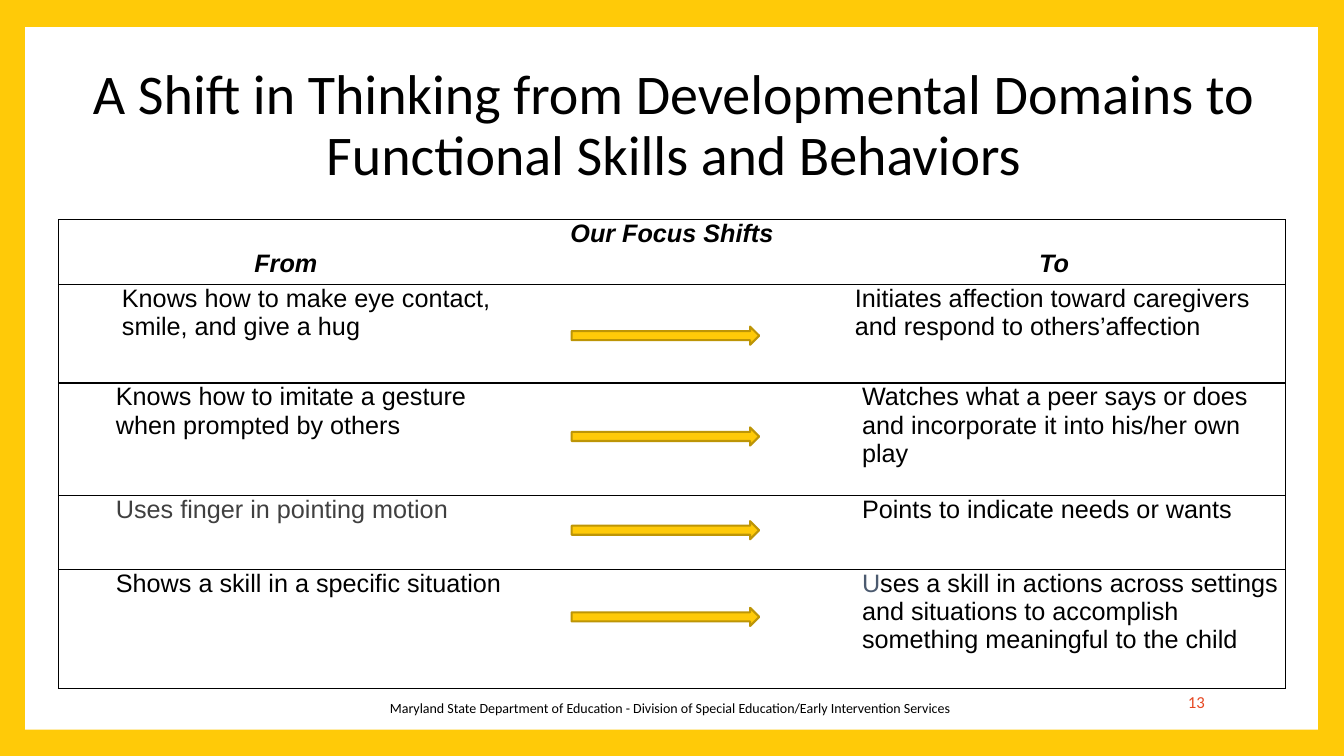
from dataclasses import dataclass
from lxml import etree
from pptx import Presentation
from pptx.dml.color import RGBColor
from pptx.enum.shapes import MSO_SHAPE
from pptx.enum.text import MSO_ANCHOR, PP_ALIGN
from pptx.oxml.ns import qn
from pptx.util import Inches, Pt

RECT, ARROW = MSO_SHAPE.RECTANGLE, MSO_SHAPE.RIGHT_ARROW
MIDDLE, TOP = MSO_ANCHOR.MIDDLE, MSO_ANCHOR.TOP
LEFT, CENTER, RIGHT = PP_ALIGN.LEFT, PP_ALIGN.CENTER, PP_ALIGN.RIGHT


@dataclass(frozen=True)
class Theme:
    gold: str = "FFCA08"
    gold_line: str = "BD9506"
    white: str = "FFFFFF"
    black: str = "000000"
    gray: str = "404040"
    slate: str = "4B5A6F"
    red: str = "E64823"
    heading: str = "Calibri"
    body: str = "Arial"
    title_size: int = 40
    table_size: int = 18
    number_size: int = 12
    footer_size: int = 10


T = Theme()


def write(tf, runs, font, size, align, bold=False):
    p = tf.paragraphs[0]
    p.alignment = align
    for text, color in runs:
        r = p.add_run()
        r.text = text
        r.font.name, r.font.size = font, Pt(size)
        r.font.bold = r.font.italic = bold
        r.font.color.rgb = RGBColor.from_string(color)
    return p


def set_borders(cell, sides):
    tcPr = cell._tc.get_or_add_tcPr()
    for i, side in enumerate("LRTB"):
        ln = etree.Element(qn(f"a:ln{side}"), w=str(Pt(1)))
        if side in sides:
            fill = etree.SubElement(ln, qn("a:solidFill"))
            etree.SubElement(fill, qn("a:srgbClr"), val=T.black)
        else:
            etree.SubElement(ln, qn("a:noFill"))
        tcPr.insert(i, ln)


prs = Presentation()
prs.slide_width, prs.slide_height = Inches(13.33), Inches(7.5)
s = prs.slides.add_slide(prs.slide_layouts[5])
s.background.fill.solid()
s.background.fill.fore_color.rgb = RGBColor.from_string(T.gold)

title = s.shapes.title
title.left, title.top = Inches(0.62), Inches(0.67)
title.width, title.height = Inches(12.12), Inches(1.18)
title.text_frame.word_wrap = True
title.text_frame.vertical_anchor = MIDDLE
p = write(title.text_frame,
          [("A Shift in Thinking from Developmental Domains to Functional Skills and Behaviors", T.black)],
          T.heading, T.title_size, CENTER)
p.line_spacing = 0.9

frame = s.shapes.add_shape(RECT, Inches(0.25), Inches(0.27), Inches(12.82), Inches(6.97))
frame.shadow.inherit = False
frame.fill.solid()
frame.fill.fore_color.rgb = RGBColor.from_string(T.white)
frame.line.fill.background()
title.element.addprevious(frame.element)

col_widths = [4.58, 3, 4.59]
row_heights = [0.3, 0.34, 0.98, 1.12, 0.73, 1.18]
shifts = [
    ([("Knows how to make eye contact, smile, and give a hug", T.black)], 0.56,
     [("Initiates affection toward caregivers and respond to others’affection", T.black)], 0.25),
    ([("Knows how to imitate a gesture when prompted by others", T.black)], 0.5,
     [("Watches what a peer says or does and incorporate it into his/her own play", T.black)], 0.32),
    ([("Uses finger in pointing motion", T.gray)], 0.5,
     [("Points to indicate needs or wants", T.black)], 0.32),
    ([("Shows a skill in a specific situation", T.black)], 0.5,
     [("U", T.slate),
      ("ses a skill in actions across settings and situations to accomplish something meaningful to the child",
       T.black)], 0.32),
]

table = s.shapes.add_table(len(row_heights), len(col_widths), Inches(0.58), Inches(2.18),
                           Inches(sum(col_widths)), Inches(sum(row_heights))).table
table.first_row = table.horz_banding = False
for col, width in zip(table.columns, col_widths):
    col.width = Inches(width)
for i, (row, height) in enumerate(zip(table.rows, row_heights)):
    row.height = Inches(height)
    for j, cell in enumerate(row.cells):
        cell.margin_left = cell.margin_right = Inches(0.07)
        cell.margin_top = cell.margin_bottom = 0
        cell.fill.background()
        sides = ("L", "", "R")[j] + ("" if i == 1 else "T") + ("" if i == 0 else "B")
        set_borders(cell, "LRT" if (i, j) == (0, 0) else sides)
table.cell(0, 0).merge(table.cell(0, 2))

for i, j, text in [(0, 0, "Our Focus Shifts"), (1, 0, "From "), (1, 2, "To")]:
    write(table.cell(i, j).text_frame, [(text, T.black)], T.body, T.table_size, CENTER, bold=True)
for i, (before, before_indent, after, after_indent) in enumerate(shifts, start=2):
    for j, runs, indent in [(0, before, before_indent), (2, after, after_indent)]:
        p = write(table.cell(i, j).text_frame, runs, T.body, T.table_size, LEFT)
        pPr = p._p.get_or_add_pPr()
        pPr.set("marL", str(Inches(indent)))
        pPr.set("indent", "0")

for top in [3.24, 4.24, 5.17, 6.03]:
    arrow = s.shapes.add_shape(ARROW, Inches(5.67), Inches(top), Inches(1.86), Inches(0.18))
    arrow.shadow.inherit = False
    arrow.fill.solid()
    arrow.fill.fore_color.rgb = RGBColor.from_string(T.gold)
    arrow.line.color.rgb = RGBColor.from_string(T.gold_line)
    arrow.line.width = Pt(1.5)

for box, text, color, size, align, anchor in [
    ((10.18, 6.76, 1.87, 0.4), "13", T.red, T.number_size, RIGHT, MIDDLE),
    ((3.61, 6.89, 6.07, 0.27),
     "Maryland State Department of Education - Division of Special Education/Early Intervention Services",
     T.black, T.footer_size, CENTER, TOP),
]:
    tf = s.shapes.add_textbox(*map(Inches, box)).text_frame
    tf.word_wrap = True
    tf.vertical_anchor = anchor
    write(tf, [(text, color)], T.heading, size, align)

prs.save("out.pptx")
